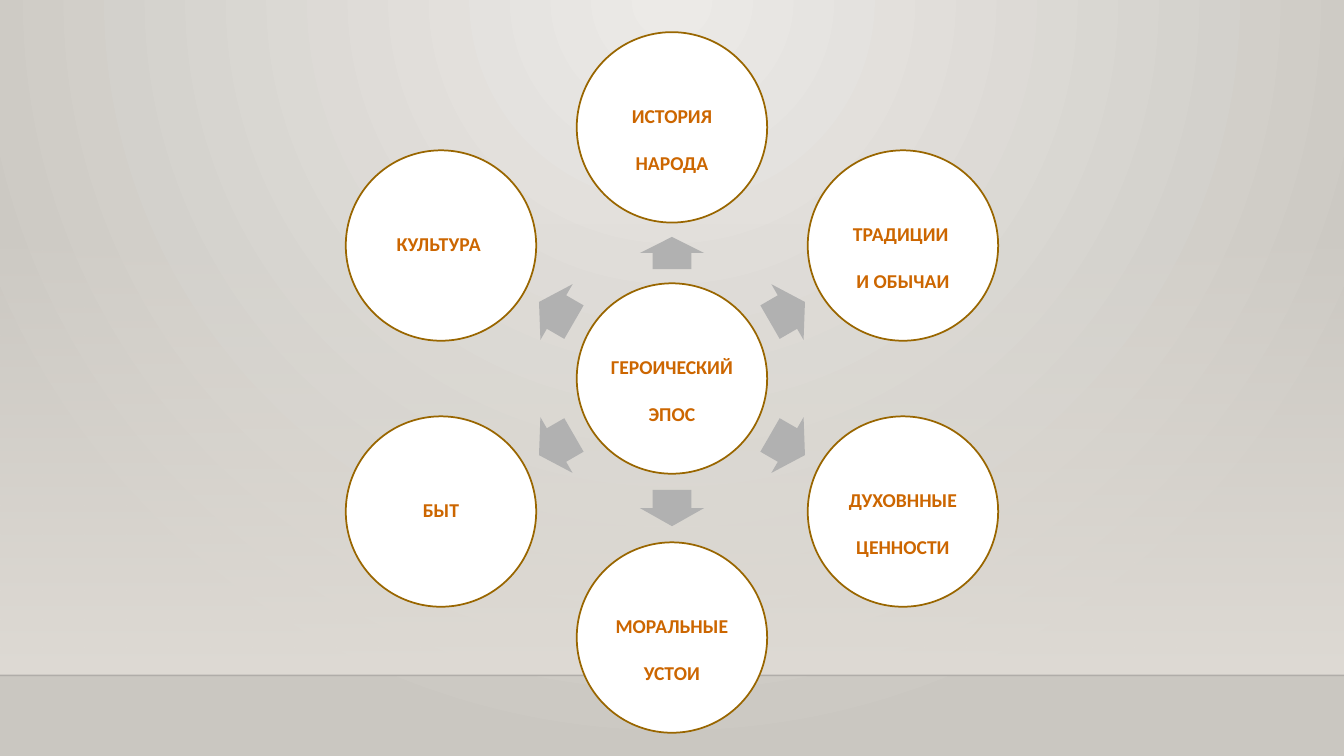
from math import atan2, degrees, hypot

from lxml.etree import SubElement
from pptx import Presentation
from pptx.dml.color import RGBColor
from pptx.enum.shapes import MSO_CONNECTOR, MSO_SHAPE
from pptx.enum.text import MSO_ANCHOR, PP_ALIGN
from pptx.oxml.ns import qn
from pptx.util import Pt

COLORS = {
    "glow": "ECEAE7", "edge": "CAC7C1", "wall": "DFDBD5", "floor_line": "000001",
    "circle": "FFFFFF", "outline": "996600", "label": "CC6600", "arrow": "B1B1B1",
}
WIDTH, HEIGHT = 960, 540
WALL_TOP, FLOOR = 159, 482.4
CENTER_X, CENTER_Y = 480, 270.4
DIAMETER = 136
ARROW_WIDTH = 46
ARROW_SHARE = 0.53  # arrow length as a share of the gap between circles
SIDE_X, SIDE_Y = 165, 95

# Label paragraphs and the offset from the central circle
THEMES = [
    (["ИСТОРИЯ НАРОДА"], 0, -179.4),
    (["ТРАДИЦИИ ", "И ОБЫЧАИ"], SIDE_X, -SIDE_Y),
    (["ДУХОВННЫЕ ЦЕННОСТИ"], SIDE_X, SIDE_Y),
    (["МОРАЛЬНЫЕ УСТОИ"], 0, 185),
    (["БЫТ"], -SIDE_X, SIDE_Y),
    (["КУЛЬТУРА "], -SIDE_X, -SIDE_Y),
]


def color(name):
    return RGBColor.from_string(COLORS[name])


def set_alpha(color_element, percent):
    SubElement(color_element, qn("a:alpha"), val=str(percent * 1000))


def set_gradient(fill, names):
    fill.gradient()
    for stop, name, position in zip(fill.gradient_stops, names, (0, 1)):
        stop.color.rgb = color(name)
        stop.position = position


def add_background(page):
    # Glow that spreads from the top middle
    fill = page.background.fill
    set_gradient(fill, ("glow", "edge"))
    gradient = next(page.element.iter(qn("a:gradFill")))
    gradient.remove(gradient.find(qn("a:lin")))
    circle = SubElement(gradient, qn("a:path"), path="circle")
    SubElement(circle, qn("a:fillToRect"), l="43000", t="0", r="43000", b="100000")

    # Wall that fades in downwards
    wall = page.shapes.add_shape(
        MSO_SHAPE.RECTANGLE, 0, Pt(WALL_TOP), Pt(WIDTH), Pt(FLOOR - WALL_TOP))
    wall.shadow.inherit = False
    set_gradient(wall.fill, ("wall", "wall"))
    gradient = next(wall.element.iter(qn("a:gradFill")))
    gradient.find(qn("a:lin")).set("ang", "5400000")
    set_alpha(next(gradient.iter(qn("a:srgbClr"))), 0)
    wall.line.fill.background()

    # Edge of the floor
    edge = page.shapes.add_connector(
        MSO_CONNECTOR.STRAIGHT, 0, Pt(FLOOR), Pt(WIDTH), Pt(FLOOR))
    edge.line.color.rgb = color("floor_line")
    edge.line.width = Pt(1)
    set_alpha(next(edge.element.spPr.iter(qn("a:srgbClr"))), 20)
    SubElement(edge.element.spPr, qn("a:effectLst"))


def add_centered(page, kind, x, y, width, height, fill):
    shape = page.shapes.add_shape(
        kind, Pt(x - width / 2), Pt(y - height / 2), Pt(width), Pt(height))
    shape.shadow.inherit = False
    shape.fill.solid()
    shape.fill.fore_color.rgb = color(fill)
    return shape


def add_circle(page, lines, x, y):
    circle = add_centered(page, MSO_SHAPE.OVAL, x, y, DIAMETER, DIAMETER, "circle")
    circle.line.color.rgb = color("outline")
    circle.line.width = Pt(1.25)
    frame = circle.text_frame
    frame.word_wrap = True
    frame.vertical_anchor = MSO_ANCHOR.MIDDLE
    frame.margin_left = frame.margin_right = Pt(1.4)
    frame.margin_top = frame.margin_bottom = Pt(1.4)
    frame.text = "\n".join(lines)
    one_word = len(" ".join(lines).split()) == 1
    for para in frame.paragraphs:
        para.alignment = PP_ALIGN.CENTER
        para.line_spacing = 0.9 if one_word else 2.0
        for span in para.runs:
            span.font.name = "Calibri"
            span.font.size = Pt(14)
            span.font.bold = True
            span.font.color.rgb = color("label")


def add_arrow(page, dx, dy):
    # Halfway between the two circles, pointing outwards
    length = (hypot(dx, dy) - DIAMETER) * ARROW_SHARE
    arrow = add_centered(page, MSO_SHAPE.RIGHT_ARROW, CENTER_X + dx / 2,
                         CENTER_Y + dy / 2, length, ARROW_WIDTH, "arrow")
    arrow.adjustments[0] = 0.6
    arrow.adjustments[1] = 0.5
    arrow.rotation = round(degrees(atan2(dy, dx))) % 360
    arrow.line.fill.background()


def main():
    deck = Presentation()
    deck.slide_width, deck.slide_height = Pt(WIDTH), Pt(HEIGHT)
    page = deck.slides.add_slide(deck.slide_layouts[6])
    add_background(page)

    # Central idea and the themes around it
    add_circle(page, ["ГЕРОИЧЕСКИЙ ЭПОС"], CENTER_X, CENTER_Y)
    for lines, dx, dy in THEMES:
        add_arrow(page, dx, dy)
        add_circle(page, lines, CENTER_X + dx, CENTER_Y + dy)

    deck.save("out.pptx")


if __name__ == "__main__":
    main()
